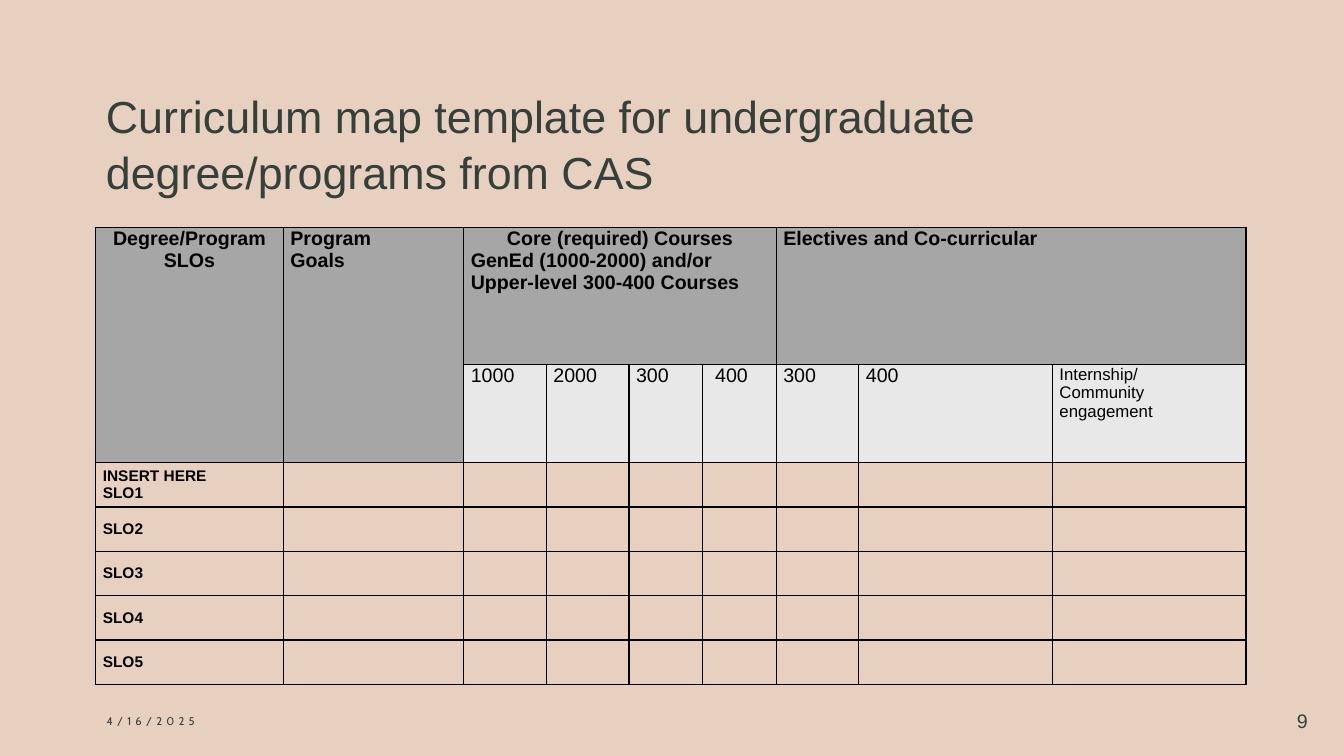
from lxml import etree
from pptx import Presentation
from pptx.dml.color import RGBColor
from pptx.enum import shapes, text
from pptx.oxml import ns
from pptx.util import Inches, Pt

INK, BLACK, HEADER, SUBHEADER = "35403A", "000000", "A6A6A6", "E8E8E8"
LEFT, CENTER, RIGHT = text.PP_ALIGN.LEFT, text.PP_ALIGN.CENTER, text.PP_ALIGN.RIGHT
TOP, MIDDLE = text.MSO_ANCHOR.TOP, text.MSO_ANCHOR.MIDDLE


def paint(color_format, color):
    color_format.rgb = RGBColor.from_string(color)


def write(frame, words, size, color, bold=False, align=LEFT, font="Arial"):
    """Fill a text frame, one paragraph per line of words."""
    frame.text = words
    frame.word_wrap = True
    for paragraph in frame.paragraphs:
        paragraph.alignment = align
        for run in paragraph.runs:
            run.font.name, run.font.size, run.font.bold = font, Pt(size), bold
            paint(run.font.color, color)


presentation = Presentation()
presentation.slide_width, presentation.slide_height = Inches(13.33), Inches(7.5)
slide = presentation.slides.add_slide(presentation.slide_layouts[5])
slide.background.fill.solid()
paint(slide.background.fill.fore_color, "EED5C4")

# Translucent tint behind everything
tint = slide.shapes.add_shape(
    shapes.MSO_SHAPE.RECTANGLE, 0, 0, presentation.slide_width, presentation.slide_height)
tint.shadow.inherit = False
tint.line.fill.background()
tint.fill.solid()
paint(tint.fill.fore_color, "C0B7A5")
tint_color = tint._element.spPr.find(".//" + ns.qn("a:srgbClr"))
etree.SubElement(tint_color, ns.qn("a:alpha"), val="15000")
slide.shapes._spTree.insert(2, tint._element)

# Title
title = slide.shapes.title
title.left, title.top, title.width, title.height = map(Inches, (0.95, 0.64, 11.43, 1.38))
write(title.text_frame, "Curriculum map template for undergraduate degree/programs from CAS", 32, INK)
title.text_frame.auto_size = text.MSO_AUTO_SIZE.NONE
title.text_frame.vertical_anchor = text.MSO_ANCHOR.BOTTOM
title.text_frame.paragraphs[0].line_spacing = 1.05

# Curriculum map
column_widths = [1.86, 1.79, 0.82, 0.82, 0.73, 0.73, 0.82, 1.92, 1.92]
row_heights = [1.36, 0.97] + [0.44] * 5
table = slide.shapes.add_table(
    len(row_heights), len(column_widths), Inches(0.95), Inches(2.26),
    Inches(sum(column_widths)), Inches(sum(row_heights))).table
table.first_row = table.horz_banding = False
for column, width in zip(table.columns, column_widths):
    column.width = Inches(width)
for row, height in zip(table.rows, row_heights):
    row.height = Inches(height)

for row_index, row in enumerate(table.rows):
    for column_index, cell in enumerate(row.cells):
        cell.margin_left = cell.margin_right = Inches(0.07)
        cell.margin_top = cell.margin_bottom = 0
        cell.vertical_anchor = TOP if row_index < 2 else MIDDLE
        if row_index < 2:
            cell.fill.solid()
            is_header = row_index == 0 or column_index < 2
            paint(cell.fill.fore_color, HEADER if is_header else SUBHEADER)
        else:
            cell.fill.background()
        properties = cell._tc.get_or_add_tcPr()
        for position, side in enumerate(("lnL", "lnR", "lnT", "lnB")):
            border = etree.Element(ns.qn("a:" + side), w=str(Pt(1)))
            border_fill = etree.SubElement(border, ns.qn("a:solidFill"))
            etree.SubElement(border_fill, ns.qn("a:srgbClr"), val=BLACK)
            properties.insert(position, border)

# First column, last row, last column of each header, and its words
headers = [
    (0, 1, 0, "Degree/Program SLOs"),
    (1, 1, 1, "Program\nGoals"),
    (2, 0, 5, "Core (required) Courses\nGenEd (1000-2000) and/or Upper-level 300-400 Courses"),
    (6, 0, 8, "Electives and Co-curricular"),
]
for first_column, last_row, last_column, words in headers:
    cell = table.cell(0, first_column)
    cell.merge(table.cell(last_row, last_column))
    write(cell.text_frame, words, 14, BLACK, bold=True)
for column_index in (0, 2):
    table.cell(0, column_index).text_frame.paragraphs[0].alignment = CENTER

levels = ["1000", "2000", "300", " 400", "300", "400", "Internship/\nCommunity engagement"]
for column_index, level in enumerate(levels, start=2):
    size = 12 if column_index == 8 else 14
    write(table.cell(1, column_index).text_frame, level, size, BLACK)

outcomes = ["INSERT HERE\nSLO1", "SLO2", "SLO3", "SLO4", "SLO5"]
for row_index, outcome in enumerate(outcomes, start=2):
    write(table.cell(row_index, 0).text_frame, outcome, 11, BLACK, bold=True)

# Footer
footers = [
    (0.96, 3, "4/16/2025", 8, LEFT, "Cabin"),
    (12.5, 0.57, "9", 14, RIGHT, "Arial"),
]
for left, width, words, size, align, font in footers:
    footer = slide.shapes.add_textbox(Inches(left), Inches(6.95), Inches(width), Inches(0.4))
    write(footer.text_frame, words, size, INK, align=align, font=font)
    footer.text_frame.vertical_anchor = MIDDLE
    if font == "Cabin":
        date_run = footer.text_frame.paragraphs[0].runs[0]
        date_run.font._element.set("spc", "300")

presentation.save("out.pptx")
